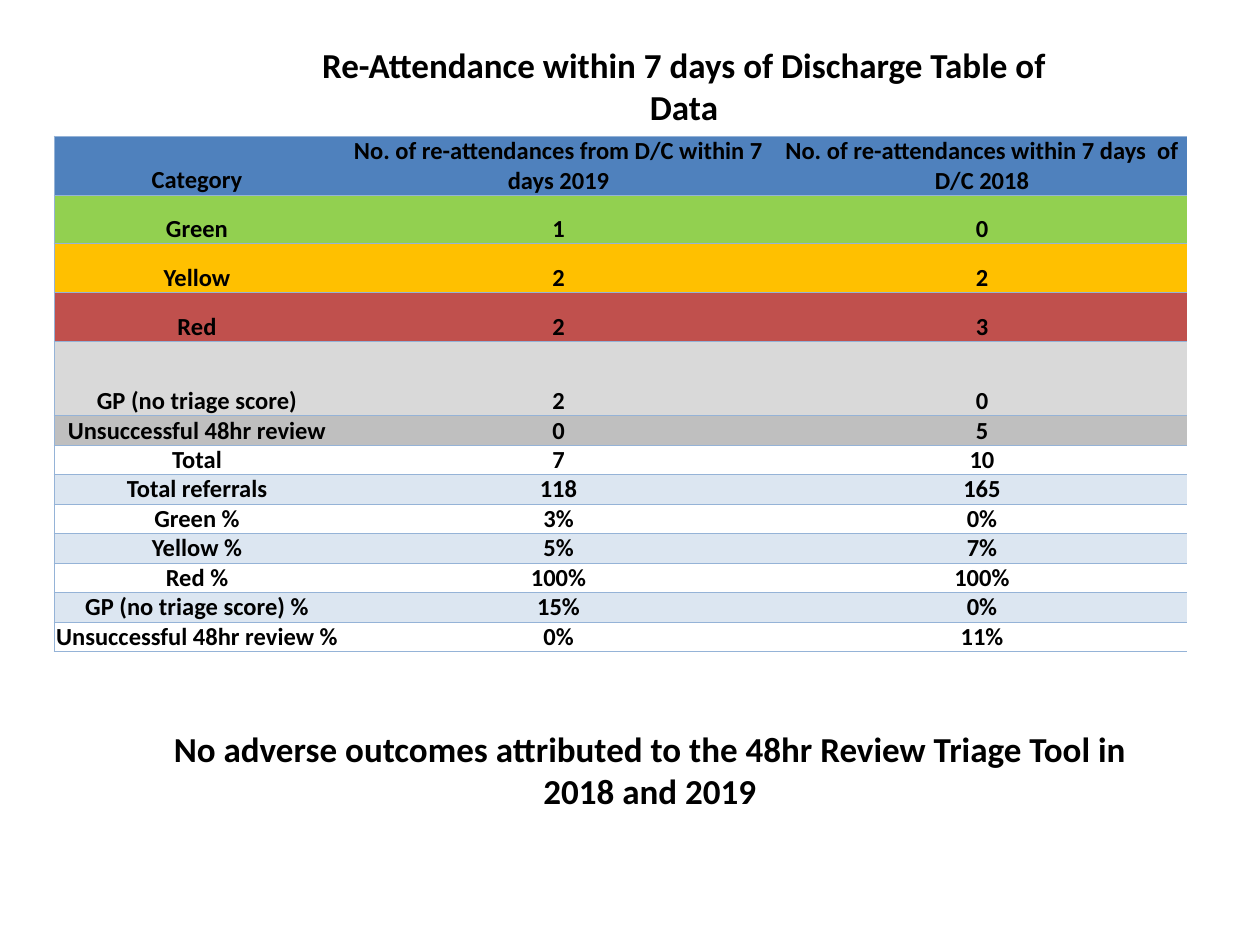
"""Build a slide with a table of re-attendances within 7 days of discharge."""
from typing import NamedTuple, Optional

from lxml import etree
from pptx import Presentation
from pptx.dml.color import RGBColor
from pptx.enum.text import MSO_ANCHOR, MSO_AUTO_SIZE, PP_ALIGN
from pptx.oxml.ns import qn
from pptx.util import Pt

PX = 914400 // 126
CENTER = PP_ALIGN.CENTER
BOTTOM = MSO_ANCHOR.BOTTOM
GROW = MSO_AUTO_SIZE.SHAPE_TO_FIT_TEXT

BLACK = RGBColor(0x00, 0x00, 0x00)
BLUE = RGBColor(0x4F, 0x81, 0xBD)
GREEN = RGBColor(0x92, 0xD0, 0x50)
AMBER = RGBColor(0xFF, 0xC0, 0x00)
RED = RGBColor(0xC0, 0x50, 0x4D)
SILVER = RGBColor(0xD9, 0xD9, 0xD9)
GREY = RGBColor(0xBF, 0xBF, 0xBF)
PALE = RGBColor(0xDC, 0xE6, 0xF1)
RULE = RGBColor(0x95, 0xB3, 0xD7)


class Box(NamedTuple):
    left: int
    top: int
    width: int
    height: int

    def emu(self) -> list[int]:
        return [side * PX for side in self]


class Row(NamedTuple):
    label: str
    latest: str
    prior: str
    fill: Optional[RGBColor] = None
    height: int = 25


class Note(NamedTuple):
    text: str
    box: Box


NOTES = [
    Note("Re-Attendance within 7 days of Discharge Table of Data", Box(302, 37, 764, 97)),
    Note("No adverse outcomes attributed to the 48hr Review Triage Tool in 2018 and 2019",
         Box(154, 721, 992, 97)),
]
GRID = Box(54, 136, 1133, 518)
WIDTHS = [286, 437, 410]
ROWS = [
    Row("Category", "No. of re-attendances from D/C within 7 days 2019",
        "No. of re-attendances within 7 days  of D/C 2018", BLUE),
    Row("Green", "1", "0", GREEN, 49),
    Row("Yellow", "2", "2", AMBER, 49),
    Row("Red", "2", "3", RED, 49),
    Row("GP (no triage score)", "2", "0", SILVER, 74),
    Row("Unsuccessful 48hr review", "0", "5", GREY),
    Row("Total", "7", "10"),
    Row("Total referrals", "118", "165", PALE),
    Row("Green %", "3%", "0%"),
    Row("Yellow %", "5%", "7%", PALE),
    Row("Red %", "100%", "100%"),
    Row("GP (no triage score) %", "15%", "0%", PALE),
    Row("Unsuccessful 48hr review %", "0%", "11%"),
]


def put_text(frame, text: str, *, size: int, color: RGBColor = BLACK, bold: bool = True) -> None:
    para = frame.paragraphs[0]
    para.alignment = CENTER
    run = para.add_run()
    run.text = text
    run.font.name = "Calibri"
    run.font.size = Pt(size)
    run.font.bold = bold
    run.font.color.rgb = color


def draw_note(slide, note: Note) -> None:
    frame = slide.shapes.add_textbox(*note.box.emu()).text_frame
    frame.word_wrap = True
    frame.auto_size = GROW
    put_text(frame, note.text, size=20)


def rule_cell(cell, sides: str) -> None:
    props = cell._tc.get_or_add_tcPr()
    for side in "LRTB":
        line = etree.SubElement(props, qn(f"a:ln{side}"), w=str(Pt(0.5)))
        if side in sides:
            fill = etree.SubElement(line, qn("a:solidFill"))
            etree.SubElement(fill, qn("a:srgbClr"), val=str(RULE))
        else:
            etree.SubElement(line, qn("a:noFill"))


def draw_cell(cell, text: str, fill: Optional[RGBColor], sides: str) -> None:
    cell.margin_left = cell.margin_right = cell.margin_top = cell.margin_bottom = 0
    cell.vertical_anchor = BOTTOM
    rule_cell(cell, sides)
    if fill is None:
        cell.fill.background()
    else:
        cell.fill.solid()
        cell.fill.fore_color.rgb = fill
    put_text(cell.text_frame, text, size=14)


def draw_table(slide, rows: list[Row]) -> None:
    shape = slide.shapes.add_table(len(rows), len(WIDTHS), *GRID.emu())
    table = shape.table
    table.first_row = table.horz_banding = False
    for col, width in zip(table.columns, WIDTHS):
        col.width = width * PX
    for r, row in enumerate(rows):
        table.rows[r].height = row.height * PX
        for c, text in enumerate((row.label, row.latest, row.prior)):
            draw_cell(table.cell(r, c), text, row.fill, "TB" if c else "LTB")
    shape.height = GRID.height * PX


def main() -> None:
    deck = Presentation()
    deck.slide_width, deck.slide_height = 1260 * PX, 945 * PX
    slide = deck.slides.add_slide(deck.slide_layouts[6])
    title, outcome = NOTES
    draw_note(slide, title)
    draw_table(slide, ROWS)
    draw_note(slide, outcome)
    deck.save("out.pptx")


if __name__ == "__main__":
    main()
